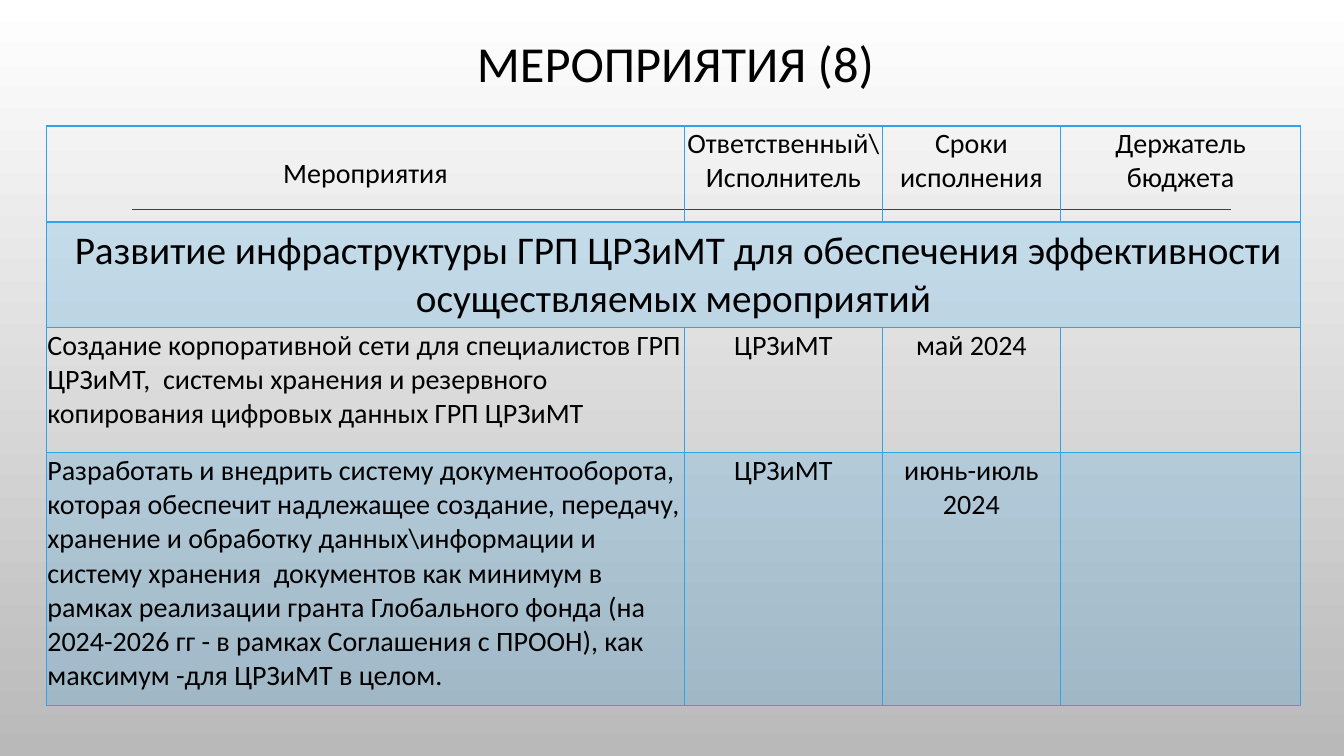
from lxml import etree
from pptx import Presentation
from pptx.dml.color import RGBColor
from pptx.enum import shapes, text
from pptx.oxml import ns
from pptx.util import Inches, Pt

TITLE = "МЕРОПРИЯТИЯ (8)"
HEAD = ["Мероприятия", "Ответственный\\Исполнитель", "Сроки исполнения", "Держатель бюджета"]
SECTION = " Развитие инфраструктуры ГРП ЦРЗиМТ для обеспечения эффективности осуществляемых мероприятий"
TASKS = [
    ["Создание корпоративной сети для специалистов ГРП ЦРЗиМТ,  системы хранения "
     "и резервного копирования цифровых данных ГРП ЦРЗиМТ",
     "ЦРЗиМТ", "май 2024", ""],
    ["Разработать и внедрить систему документооборота, которая обеспечит надлежащее "
     "создание, передачу, хранение и обработку данных\\информации и систему хранения  "
     "документов как минимум в рамках реализации гранта Глобального фонда (на 2024-2026 гг "
     "- в рамках Соглашения с ПРООН), как максимум -для ЦРЗиМТ в целом.",
     "ЦРЗиМТ", "июнь-июль 2024", ""],
]
ROWS = [HEAD, [SECTION, "", "", ""], *TASKS]
WIDTHS = [6.33, 1.96, 1.77, 2.38]
HEIGHTS = [0.95, 1.05, 1.24, 2.51]
COLORS = {"text": "000000", "table": "2FA3EE", "rule": "404040", "top": "FFFFFF", "base": "B9B9B9"}
INSETS = {"margin_left": 0.01, "margin_right": 0.01, "margin_top": 0.01, "margin_bottom": 0}
MIDDLE = text.MSO_ANCHOR.MIDDLE
CENTER = text.PP_ALIGN.CENTER


def rgb(name):
    return RGBColor.from_string(COLORS[name])


def style(par, size, align):
    par.alignment = align
    for key, val in {"name": "Calibri", "size": Pt(size), "bold": False}.items():
        setattr(par.font, key, val)
    par.font.color.rgb = rgb("text")


def tint(cell):
    """Fill the cell with the table colour at 20% opacity."""
    cell.fill.solid()
    cell.fill.fore_color.rgb = rgb("table")
    color = cell._tc.tcPr.find(".//" + ns.qn("a:srgbClr"))
    etree.SubElement(color, ns.qn("a:alpha"), val="20000")


def border(cell, base):
    """Outline the cell; base is the width of its bottom edge in points."""
    for pos, (side, width) in enumerate({"L": 1, "R": 1, "T": 1, "B": base}.items()):
        edge = etree.Element(ns.qn("a:ln" + side), w=str(Pt(width)))
        fill = etree.SubElement(edge, ns.qn("a:solidFill"))
        etree.SubElement(fill, ns.qn("a:srgbClr"), val=COLORS["table"])
        cell._tc.get_or_add_tcPr().insert(pos, edge)


def add_rule(slide):
    rule = slide.shapes.add_connector(
        shapes.MSO_CONNECTOR.STRAIGHT, Inches(1.31), Inches(2.08), Inches(12.21), Inches(2.08))
    rule.line.color.rgb = rgb("rule")
    rule.line.width = Pt(1)
    etree.SubElement(rule._element.spPr, ns.qn("a:effectLst"))


def add_title(slide):
    title = slide.shapes.title
    for key, val in {"left": 1.2, "top": 0.31, "width": 11, "height": 0.7}.items():
        setattr(title, key, Inches(val))
    title.text_frame.text = TITLE
    title.text_frame.vertical_anchor = MIDDLE
    par = title.text_frame.paragraphs[0]
    par.line_spacing = 0.9
    style(par, 36, CENTER)


def add_plan(slide):
    plan = slide.shapes.add_table(
        len(ROWS), len(WIDTHS), Inches(0.46), Inches(1.25),
        Inches(sum(WIDTHS)), Inches(sum(HEIGHTS))).table
    plan.first_row = plan.horz_banding = False
    for col, width in zip(plan.columns, WIDTHS):
        col.width = Inches(width)
    for row, height in zip(plan.rows, HEIGHTS):
        row.height = Inches(height)
    plan.cell(1, 0).merge(plan.cell(1, len(WIDTHS) - 1))

    for r, row in enumerate(ROWS):
        for c, words in enumerate(row):
            cell = plan.cell(r, c)
            for key, val in INSETS.items():
                setattr(cell, key, Inches(val))
            if r == 1 or (r, c) == (0, 0):
                cell.vertical_anchor = MIDDLE
            cell.text = words
            align = text.PP_ALIGN.LEFT if c == 0 and r > 1 else CENTER
            style(cell.text_frame.paragraphs[0], 28 if r == 1 else 20, align)
            if r % 2:
                tint(cell)
            else:
                cell.fill.background()
            border(cell, 2 if r == 0 else 1)


def main():
    deck = Presentation()
    deck.slide_width, deck.slide_height = Inches(13.33), Inches(7.5)
    slide = deck.slides.add_slide(deck.slide_layouts[5])
    back = slide.background.fill
    back.gradient()
    back.gradient_angle = 270
    for stop, name in zip(back.gradient_stops, ["top", "base"]):
        stop.color.rgb = rgb(name)
    add_rule(slide)
    add_title(slide)
    add_plan(slide)
    deck.save("out.pptx")


if __name__ == "__main__":
    main()
